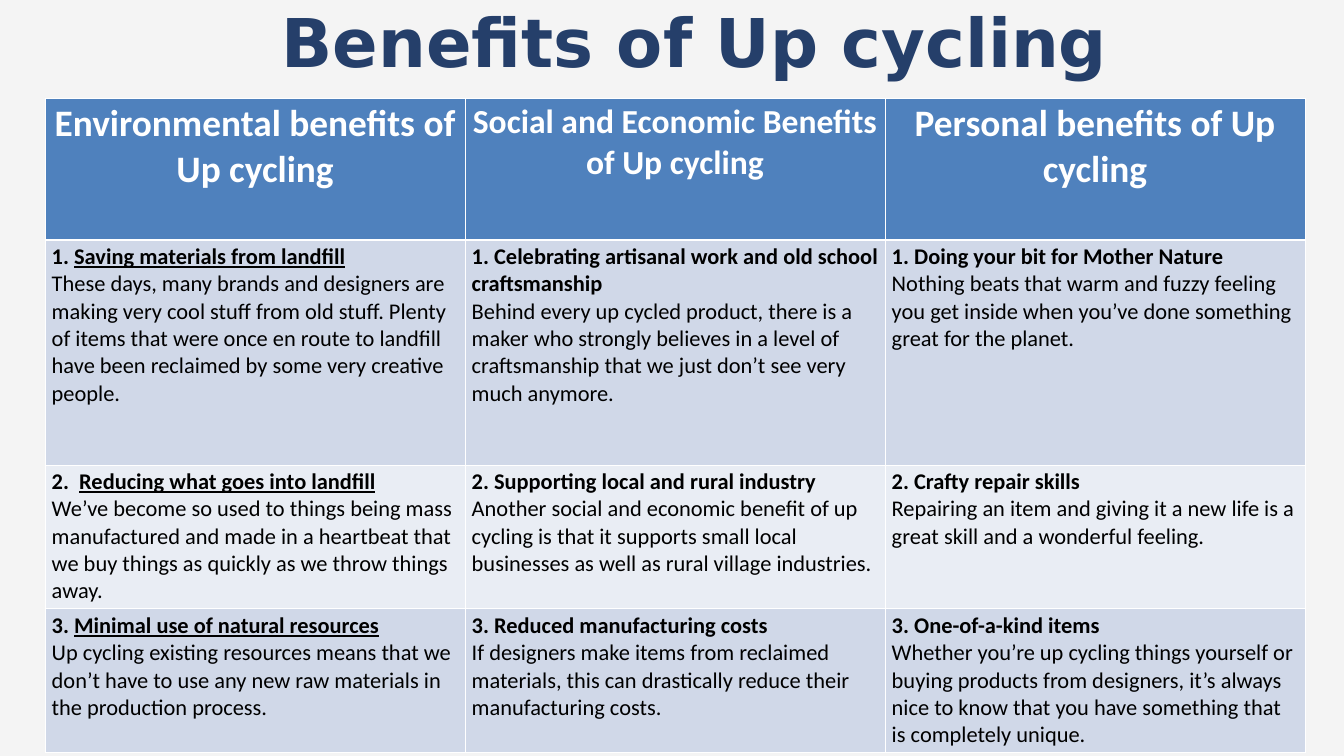
from lxml.etree import fromstring
from pptx import Presentation
from pptx.dml.color import RGBColor
from pptx.enum.text import MSO_ANCHOR, PP_ALIGN
from pptx.oxml.ns import nsdecls
from pptx.util import Inches, Pt

TITLE = "Benefits of Up cycling"
HEADERS = [
    ("Environmental benefits of Up cycling", 40),
    ("Social and Economic Benefits of Up cycling", 36),
    ("Personal benefits of Up cycling", 40),
]
# Each row holds one (number, heading, explanation) per column.
BENEFITS = [
    [
        ("1. ", "Saving materials from landfill",
         "These days, many brands and designers are making very cool stuff from old stuff. "
         "Plenty of items that were once en route to landfill have been reclaimed by some "
         "very creative people."),
        ("1. ", "Celebrating artisanal work and old school craftsmanship",
         "Behind every up cycled product, there is a maker who strongly believes in a level "
         "of craftsmanship that we just don’t see very much anymore."),
        ("1. ", "Doing your bit for Mother Nature",
         "Nothing beats that warm and fuzzy feeling you get inside when you’ve done "
         "something great for the planet."),
    ],
    [
        ("2.  ", "Reducing what goes into landfill",
         "We’ve become so used to things being mass manufactured and made in a heartbeat "
         "that we buy things as quickly as we throw things away."),
        ("2. ", "Supporting local and rural industry",
         "Another social and economic benefit of up cycling is that it supports small local "
         "businesses as well as rural village industries."),
        ("2. ", "Crafty repair skills",
         "Repairing an item and giving it a new life is a great skill and a wonderful feeling."),
    ],
    [
        ("3. ", "Minimal use of natural resources",
         "Up cycling existing resources means that we don’t have to use any new raw "
         "materials in the production process."),
        ("3. ", "Reduced manufacturing costs",
         "If designers make items from reclaimed materials, this can drastically reduce "
         "their manufacturing costs."),
        ("3. ", "One-of-a-kind items",
         "Whether you’re up cycling things yourself or buying products from designers, it’s "
         "always nice to know that you have something that is completely unique."),
    ],
]

SLIDE_WIDTH, SLIDE_HEIGHT = 20, 11.25
LEFT, TABLE_TOP = 0.67, 1.46
COLUMN_WIDTH = 6.25
ROW_HEIGHTS = [2.11, 3.35, 2.14, 2.13]
HEADER_FILL, BAND_FILLS = "4F81BD", ["D0D8E8", "E9EDF4"]


def color(hex_string):
    return RGBColor.from_string(hex_string)


def add_text(paragraph, text, size=24, font="Calibri", hex_color="000000",
             bold=False, underline=False):
    run = paragraph.add_run()
    run.text = text
    run.font.size = Pt(size)
    run.font.name = font
    run.font.color.rgb = color(hex_string=hex_color)
    run.font.bold = bold
    run.font.underline = underline


def style_cell(cell, fill, top=1, bottom=1):
    """Fill a cell and give it white borders, widths in points."""
    cell.fill.solid()
    cell.fill.fore_color.rgb = color(fill)
    properties = cell._tc.get_or_add_tcPr()
    sides = [("lnL", 1), ("lnR", 1), ("lnT", top), ("lnB", bottom)]
    for position, (side, width) in enumerate(sides):
        properties.insert(position, fromstring(
            f'<a:{side} {nsdecls("a")} w="{Pt(width)}"><a:solidFill>'
            f'<a:srgbClr val="FFFFFF"/></a:solidFill></a:{side}>'))


def add_title(slide):
    title = slide.shapes.title
    title.left, title.top = Inches(LEFT), 0
    title.width, title.height = Inches(SLIDE_WIDTH - LEFT), Inches(1.21)
    frame = title.text_frame
    frame.margin_left = frame.margin_right = frame.margin_top = frame.margin_bottom = 0
    frame.vertical_anchor = MSO_ANCHOR.TOP
    paragraph = frame.paragraphs[0]
    paragraph.alignment = PP_ALIGN.CENTER
    add_text(paragraph, TITLE, size=72, font="DejaVu Sans", hex_color="253F6A", bold=True)


def add_benefits_table(slide):
    table = slide.shapes.add_table(
        len(ROW_HEIGHTS), len(HEADERS), Inches(LEFT), Inches(TABLE_TOP),
        Inches(COLUMN_WIDTH * len(HEADERS)), Inches(sum(ROW_HEIGHTS))).table
    for column in table.columns:
        column.width = Inches(COLUMN_WIDTH)
    for row, height in zip(table.rows, ROW_HEIGHTS):
        row.height = Inches(height)

    for column, (text, size) in enumerate(HEADERS):
        cell = table.cell(0, column)
        style_cell(cell, HEADER_FILL, bottom=3)
        paragraph = cell.text_frame.paragraphs[0]
        paragraph.alignment = PP_ALIGN.CENTER
        add_text(paragraph, text, size=size, hex_color="FFFFFF", bold=True)

    for row, benefits in enumerate(BENEFITS, start=1):
        for column, (number, heading, explanation) in enumerate(benefits):
            cell = table.cell(row, column)
            style_cell(cell, BAND_FILLS[(row - 1) % 2], top=3 if row == 1 else 1)
            paragraph = cell.text_frame.paragraphs[0]
            add_text(paragraph, number, bold=True)
            add_text(paragraph, heading, bold=True, underline=column == 0)
            paragraph.add_line_break()
            add_text(paragraph, explanation)


def main():
    presentation = Presentation()
    presentation.slide_width = Inches(SLIDE_WIDTH)
    presentation.slide_height = Inches(SLIDE_HEIGHT)
    slide = presentation.slides.add_slide(presentation.slide_layouts[5])
    slide.background.fill.solid()
    slide.background.fill.fore_color.rgb = color("F4F4F4")
    add_title(slide)
    add_benefits_table(slide)
    presentation.save("out.pptx")


if __name__ == "__main__":
    main()
